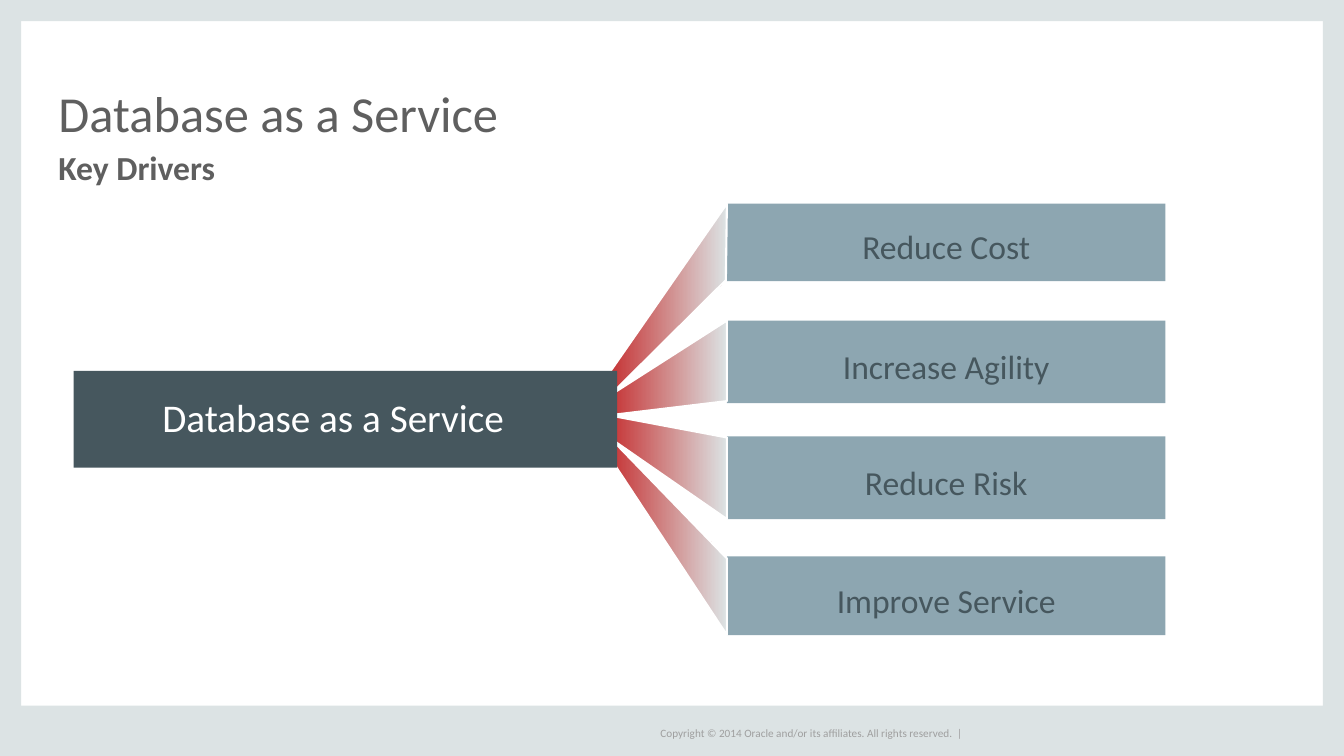
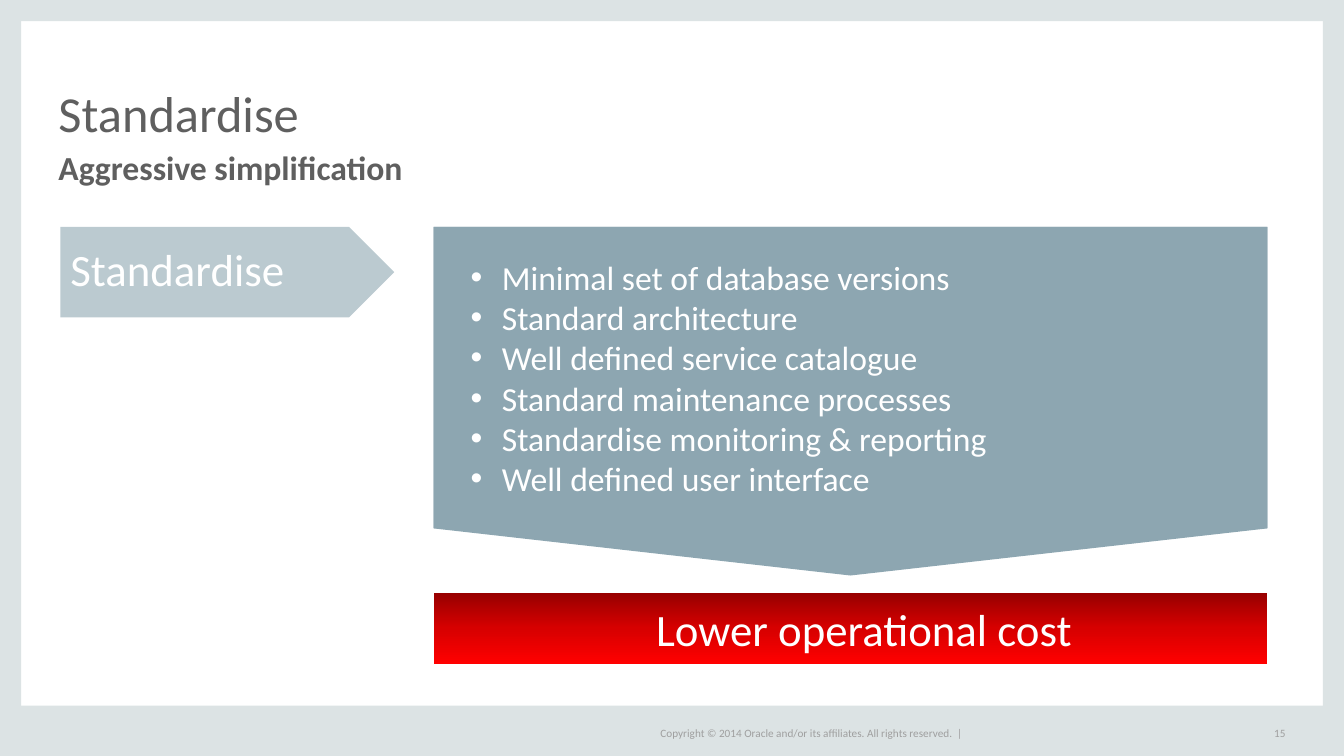
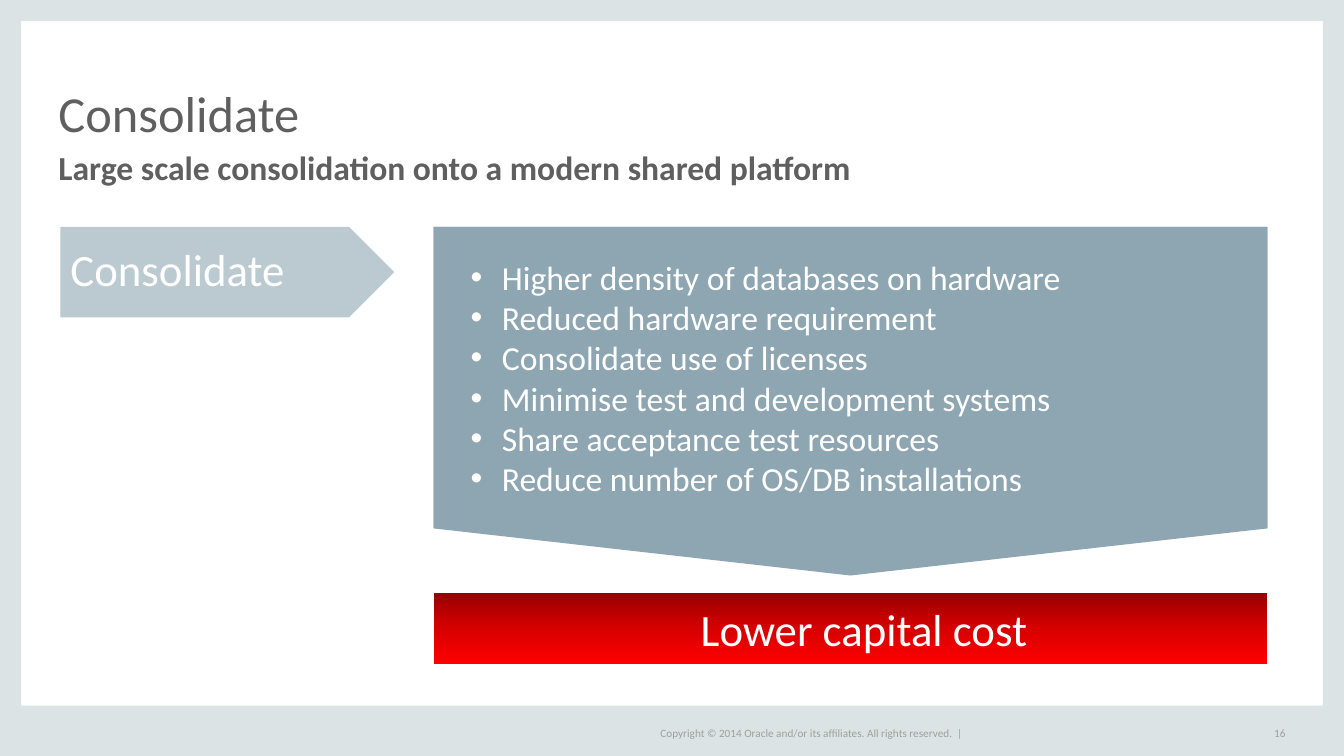
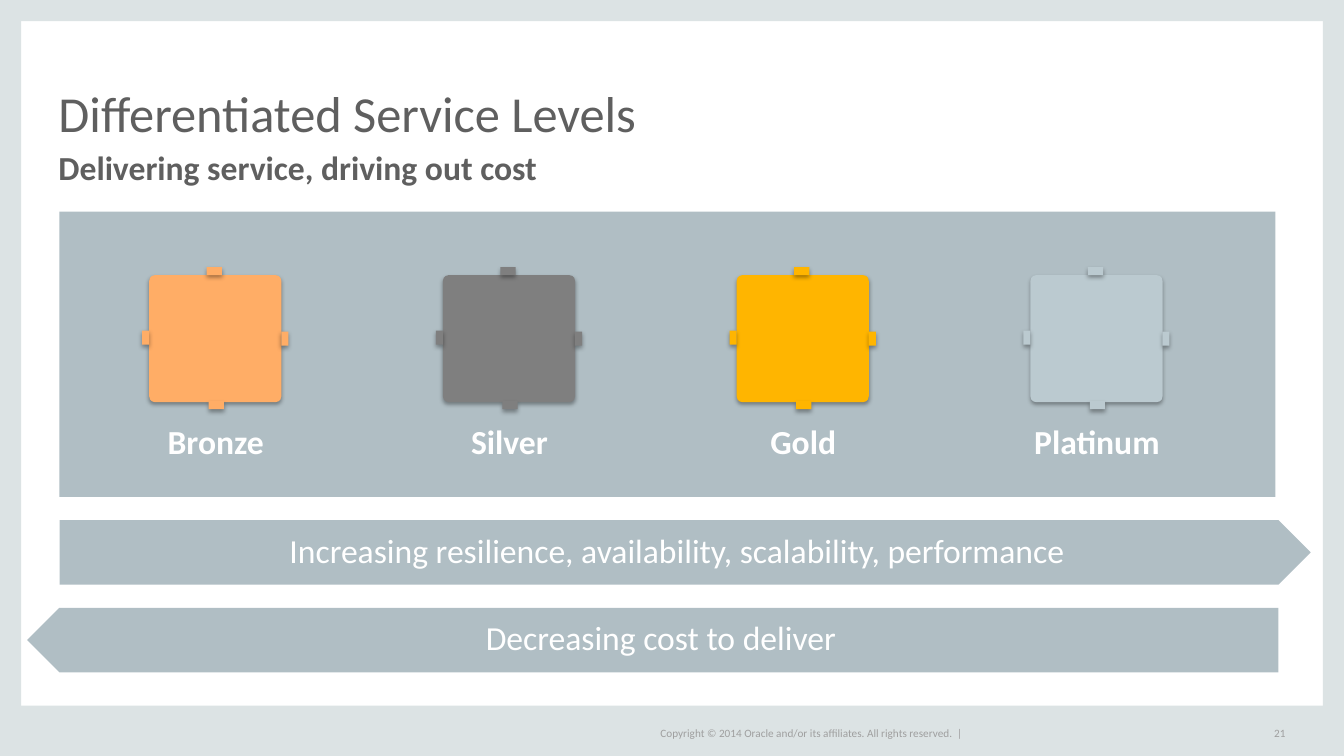
from lxml.etree import SubElement
from pptx import Presentation
from pptx.dml.color import RGBColor
from pptx.enum.shapes import MSO_SHAPE
from pptx.enum.text import MSO_ANCHOR, MSO_AUTO_SIZE, PP_ALIGN
from pptx.oxml.ns import qn
from pptx.util import Inches, Pt

FONT = "Calibri"
WHITE, FRAME, GREY, FOOTER_GREY = "FFFFFF", "DCE3E4", "5F5F5F", "9F9F9F"
SLATE, STEEL, PALE, MIST = "46575E", "8DA6B1", "BBCAD0", "B0BEC4"
WEDGE_STOPS = [(0, "BF0000"), (100, FRAME)]
RESULT_STOPS = [(0, "970000"), (50, "D70000"), (100, "FF0000")]

BANDS = [(0, 0, 0.21, 7.49), (13.12, 0.01, 0.21, 7.49), (0, 7, 13.33, 0.5), (0, 0, 13.33, 0.21)]
COPYRIGHT = "Copyright © 2014 Oracle and/or its affiliates. All rights reserved.  |"

DRIVERS = {
    "title": "Database as a Service",
    "subtitle": "Key Drivers",
    "service": "Database as a Service",
    "drivers": [
        ("Reduce Cost", 2.02, 0.77),
        ("Increase Agility", 3.18, 0.82),
        ("Reduce Risk", 4.33, 0.82),
        ("Improve Service", 5.52, 0.78),
    ],
    "wedges": [
        [(5.71, 4.16), (5.71, 4.14), (7.21, 3.18), (7.21, 3.98)],
        [(5.71, 4.11), (5.72, 4.06), (7.21, 4.34), (7.21, 5.15)],
        [(5.74, 4.07), (5.71, 3.99), (7.21, 5.54), (7.21, 6.3)],
        [(5.71, 4.26), (5.71, 4.18), (7.21, 2.02), (7.2, 2.78)],
    ],
}
STEPS = [
    {
        "title": "Standardise",
        "subtitle": "Aggressive simplification",
        "number": "15",
        "points": [
            "Minimal set of database versions",
            "Standard architecture",
            "Well defined service catalogue",
            "Standard maintenance processes",
            "Standardise monitoring & reporting",
            "Well defined user interface",
        ],
        "result": "Lower operational cost",
    },
    {
        "title": "Consolidate",
        "subtitle": "Large scale consolidation onto a modern shared platform",
        "number": "16",
        "points": [
            "Higher density of databases on hardware",
            "Reduced hardware requirement",
            "Consolidate use of licenses",
            "Minimise test and development systems",
            "Share acceptance test resources",
            "Reduce number of OS/DB installations",
        ],
        "result": "Lower capital cost",
    },
]
LEVELS = {
    "title": "Differentiated Service Levels",
    "subtitle": "Delivering service, driving out cost",
    "number": "21",
    "tiers": [("Bronze", "FFAD66"), ("Silver", "7F7F7F"), ("Gold", "FFB500"), ("Platinum", PALE)],
    "trends": [
        ("Increasing resilience, availability, scalability, performance", 0.59, 5.16, False),
        ("Decreasing cost to deliver", 0.27, 6.03, True),
    ],
}
TIER_LEFT, TIER_LAST = 1.48, 10.22
TABS = [
    (-0.07, 0.55, 0.07, 0.14),
    (1.31, 0.56, 0.07, 0.14),
    (0.59, 1.25, 0.15, 0.08),
    (0.57, -0.08, 0.15, 0.08),
]


def rgb(color):
    return RGBColor.from_string(color)


def apply(target, values):
    for name, value in values.items():
        setattr(target, name, value)


def add_bullet(paragraph, color):
    properties = paragraph._p.get_or_add_pPr()
    apply_indent = {"marL": Inches(0.58), "indent": Inches(-0.31)}
    for name, value in apply_indent.items():
        properties.set(name, str(value))
    SubElement(SubElement(properties, qn("a:buClr")), qn("a:srgbClr"), val=color)
    SubElement(properties, qn("a:buFont"), typeface="Arial")
    SubElement(properties, qn("a:buChar"), char="•")


def write(shape, lines, size, color, bold=False, align=PP_ALIGN.LEFT, anchor=MSO_ANCHOR.MIDDLE,
          spacing=1.0, insets=(0.1, 0.05, 0.1, 0.05), bullets=False):
    frame = shape.text_frame
    left, top, right, bottom = map(Inches, insets)
    apply(frame, {
        "word_wrap": True, "auto_size": MSO_AUTO_SIZE.NONE, "vertical_anchor": anchor,
        "margin_left": left, "margin_top": top, "margin_right": right, "margin_bottom": bottom,
    })
    for index, line in enumerate(lines):
        paragraph = frame.add_paragraph() if index else frame.paragraphs[0]
        apply(paragraph, {"alignment": align, "line_spacing": spacing})
        if bullets:
            add_bullet(paragraph, color)
        run = paragraph.add_run()
        run.text = line
        apply(run.font, {"name": FONT, "size": Pt(size), "bold": bold})
        run.font.color.rgb = rgb(color)


def add_label(shapes, box, text, size, color, **style):
    label = shapes.add_textbox(*map(Inches, box))
    write(label, [text], size, color, insets=(0, 0, 0, 0), **style)
    return label


def add_block(shapes, kind, box, color):
    block = shapes.add_shape(kind, *map(Inches, box))
    block.shadow.inherit = False
    block.fill.solid()
    block.fill.fore_color.rgb = rgb(color)
    block.line.fill.background()
    return block


def set_gradient(shape, stops, angle):
    shape.fill.gradient()
    shape.fill.gradient_angle = angle
    stop_list = shape._element.spPr.find(qn("a:gradFill")).find(qn("a:gsLst"))
    stop_list.clear()
    for position, color in stops:
        stop = SubElement(stop_list, qn("a:gs"), pos=str(position * 1000))
        SubElement(stop, qn("a:srgbClr"), val=color)


def add_shadow(shape):
    effects = shape._element.spPr.find(qn("a:effectLst"))
    shadow = SubElement(effects, qn("a:outerShdw"), blurRad=str(Pt(3.1)), dist=str(Pt(1.8)),
                        dir="5400000", rotWithShape="0")
    color = SubElement(shadow, qn("a:srgbClr"), val="000000")
    SubElement(color, qn("a:alpha"), val="35000")


def add_frame(layout, slide):
    for placeholder in list(layout.placeholders)[1:]:
        layout.shapes._spTree.remove(placeholder._element)
    parts = [add_block(slide.shapes, MSO_SHAPE.RECTANGLE, band, FRAME) for band in BANDS]
    parts.append(add_label(slide.shapes, (6.55, 7.17, 3.05, 0.2), COPYRIGHT, 8, FOOTER_GREY))
    for part in parts:
        layout.shapes._spTree.append(part._element)


def add_slide(deck, content):
    slide = deck.slides.add_slide(deck.slide_layouts[5])
    title = slide.shapes.title
    apply(title, {"left": Inches(0.58), "top": Inches(0.44),
                  "width": Inches(12.17), "height": Inches(0.97)})
    write(title, [content["title"]], 36, GREY, anchor=MSO_ANCHOR.BOTTOM, spacing=0.8,
          insets=(0, 0, 0, 0))
    add_label(slide.shapes, (0.58, 1.5, 12.17, 0.38), content["subtitle"], 24, GREY, bold=True,
              anchor=MSO_ANCHOR.TOP, spacing=0.9)
    if "number" in content:
        add_label(slide.shapes, (12.33, 7.17, 0.42, 0.2), content["number"], 8, FOOTER_GREY,
                  align=PP_ALIGN.RIGHT)
    return slide


def fill_drivers(slide, content):
    shapes = slide.shapes
    for driver, top, height in content["drivers"]:
        bar = add_block(shapes, MSO_SHAPE.RECTANGLE, (7.21, top, 4.35, height), STEEL)
        write(bar, [driver], 24, SLATE, align=PP_ALIGN.CENTER, insets=(0.1, 0.13, 0.1, 0.05))
    for corners in content["wedges"]:
        start, *others = [(Inches(x), Inches(y)) for x, y in corners]
        outline = shapes.build_freeform(*start)
        outline.add_line_segments(others)
        wedge = outline.convert_to_shape()
        wedge.shadow.inherit = False
        set_gradient(wedge, WEDGE_STOPS, 0)
        wedge.line.color.rgb = rgb(WHITE)
        wedge.line.width = Pt(1.5)
    service = add_block(shapes, MSO_SHAPE.RECTANGLE, (0.73, 3.68, 5.39, 0.96), SLATE)
    write(service, [content["service"]], 28, WHITE, align=PP_ALIGN.CENTER, spacing=0.9,
          insets=(0.1, 0.05, 0.34, 0.05))


def fill_step(slide, content):
    shapes = slide.shapes
    arrow = add_block(shapes, MSO_SHAPE.DOWN_ARROW, (4.3, 2.25, 8.27, 3.46), STEEL)
    arrow.adjustments[0], arrow.adjustments[1] = 1, 0.135
    panel = add_block(shapes, MSO_SHAPE.RECTANGLE, (4.3, 2.25, 8.27, 2.99), STEEL)
    write(panel, content["points"], 24, WHITE, bullets=True)
    step = add_block(shapes, MSO_SHAPE.PENTAGON, (0.6, 2.25, 3.31, 0.9), PALE)
    write(step, [content["title"]], 32, WHITE, spacing=0.9)
    result = add_block(shapes, MSO_SHAPE.RECTANGLE, (4.3, 5.88, 8.27, 0.71), WHITE)
    set_gradient(result, RESULT_STOPS, 270)
    write(result, [content["result"]], 32, WHITE, align=PP_ALIGN.CENTER,
          insets=(0.37, 0.05, 0.1, 0.05))


def fill_levels(slide, content):
    add_block(slide.shapes, MSO_SHAPE.RECTANGLE, (0.59, 2.1, 12.06, 2.83), MIST)
    pitch = (TIER_LAST - TIER_LEFT) / (len(content["tiers"]) - 1)
    for index, (tier, color) in enumerate(content["tiers"]):
        left, top = TIER_LEFT + index * pitch, 2.73
        shapes = slide.shapes.add_group_shape().shapes
        tile = add_block(shapes, MSO_SHAPE.ROUNDED_RECTANGLE, (left, top, 1.31, 1.26), color)
        tile.adjustments[0] = 0.045
        add_shadow(tile)
        for x, y, width, height in TABS:
            tab = add_block(shapes, MSO_SHAPE.RECTANGLE, (left + x, top + y, width, height), color)
            add_shadow(tab)
        add_label(shapes, (left - 0.09, 4.22, 1.5, 0.39), tier, 24, WHITE, bold=True,
                  align=PP_ALIGN.CENTER, anchor=MSO_ANCHOR.TOP, spacing=0.9)
    for trend, left, top, flipped in content["trends"]:
        arrow = add_block(slide.shapes, MSO_SHAPE.PENTAGON, (left, top, 12.41, 0.64), MIST)
        if flipped:
            arrow._element.spPr.xfrm.set("flipH", "1")
        write(arrow, [trend], 24, WHITE, align=PP_ALIGN.CENTER, spacing=0.9)


def main():
    deck = Presentation()
    apply(deck, {"slide_width": Inches(13.33), "slide_height": Inches(7.5)})
    drivers = add_slide(deck, DRIVERS)
    add_frame(deck.slide_layouts[5], drivers)
    fill_drivers(drivers, DRIVERS)
    for step in STEPS:
        fill_step(add_slide(deck, step), step)
    fill_levels(add_slide(deck, LEVELS), LEVELS)
    deck.save("out.pptx")


if __name__ == "__main__":
    main()
